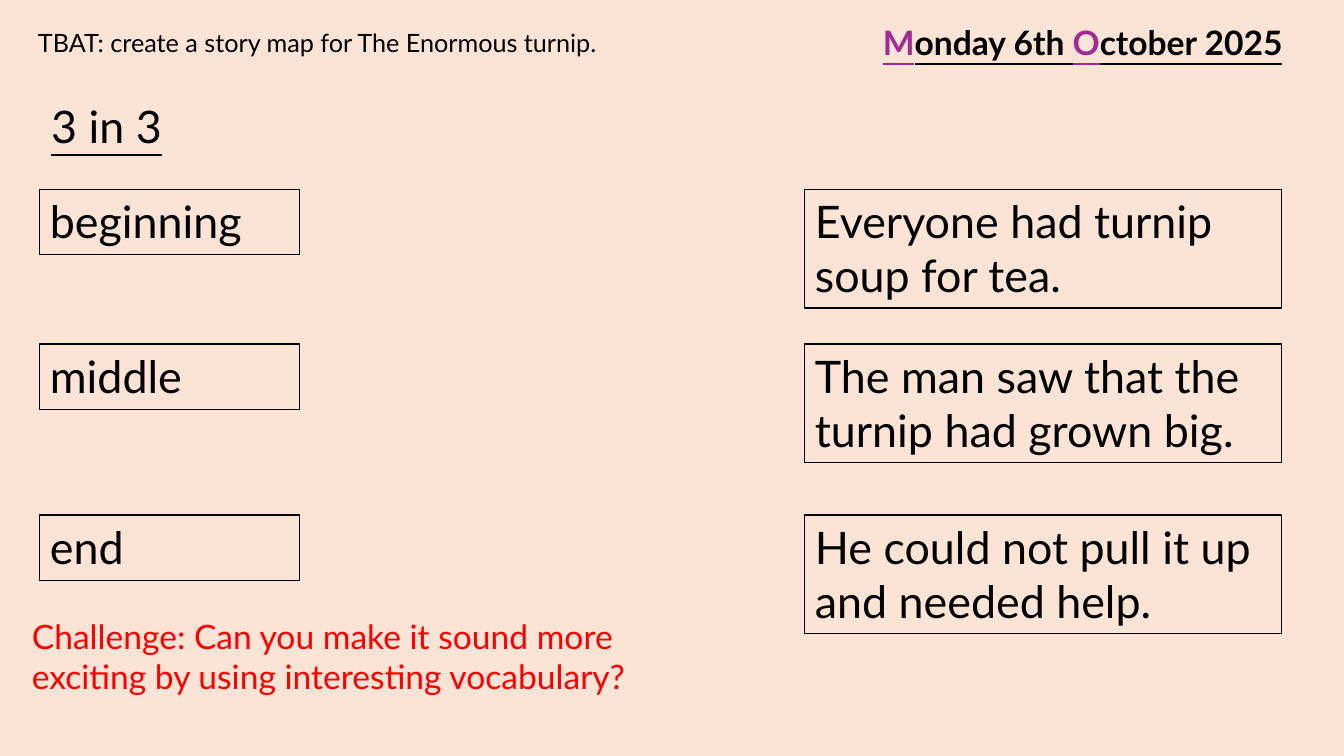
from pptx import Presentation
from pptx.dml.color import RGBColor
from pptx.enum.text import MSO_ANCHOR, MSO_AUTO_SIZE, PP_ALIGN
from pptx.util import Emu, Pt

TOP = MSO_ANCHOR.TOP
GROW = MSO_AUTO_SIZE.SHAPE_TO_FIT_TEXT
LEFT = PP_ALIGN.LEFT

PEACH = RGBColor(0xFB, 0xE3, 0xD6)
BLACK = RGBColor(0x00, 0x00, 0x00)
PURPLE = RGBColor(0xA0, 0x2B, 0x93)
RED = RGBColor(0xFF, 0x00, 0x00)

EMU_PER_PX = 914400 / 100.8
TITLE_ONLY = 5


def px(length):
    return Emu(round(length * EMU_PER_PX))


class StoryPage:
    font_name = "Lato"

    def __init__(self, deck):
        self.page = deck.slides.add_slide(deck.slide_layouts[TITLE_ONLY])
        fill = self.page.background.fill
        fill.solid()
        fill.fore_color.rgb = PEACH

    def fill_text(self, box, spans, size, **extra):
        frame = box.text_frame
        for name, value in {"word_wrap": True, "auto_size": GROW, "vertical_anchor": TOP}.items():
            setattr(frame, name, value)
        para = frame.paragraphs[0]
        para.alignment = LEFT
        style = {"name": self.font_name, "size": Pt(size), **extra}
        for text, colour in spans:
            span = para.add_run()
            span.text = text
            for name, value in style.items():
                setattr(span.font, name, value)
            span.font.color.rgb = colour

    def title(self, text, left, top, width, height):
        box = self.page.shapes.title
        place = {"left": left, "top": top, "width": width, "height": height}
        for name, value in place.items():
            setattr(box, name, px(value))
        self.fill_text(box, [(text, BLACK)], 32, underline=True)

    def text(self, spans, place, size, **extra):
        box = self.page.shapes.add_textbox(*map(px, place))
        self.fill_text(box, spans, size, **extra)
        return box

    def card(self, text, *place):
        box = self.text([(text, BLACK)], place, 32)
        box.line.color.rgb = BLACK
        box.line.width = Pt(0.75)


def main():
    deck = Presentation()
    deck.slide_width, deck.slide_height = px(1344), px(756)
    story = StoryPage(deck)

    date = [("M", PURPLE), ("onday 6th ", BLACK), ("O", PURPLE), ("ctober 2025", BLACK)]
    story.text(date, (873, 17, 519, 50), 24, bold=True, underline=True)
    story.title("3 in 3", 41, 94, 397, 65)
    objective = "TBAT: create a story map for The Enormous turnip."
    story.text([(objective, BLACK)], (28, 22, 645, 40), 18)

    rows = [
        (189, "beginning", "Everyone had turnip soup for tea."),
        (344, "middle", "The man saw that the turnip had grown big."),
        (515, "end", "He could not pull it up and needed help."),
    ]
    for top, stage, event in rows:
        story.card(stage, 40, top, 260, 66)
        story.card(event, 805, top, 477, 119)

    challenge = "Challenge: Can you make it sound more exciting by using interesting vocabulary?"
    story.text([(challenge, RED)], (22, 611, 664, 92), 24)

    deck.save("out.pptx")


if __name__ == "__main__":
    main()
